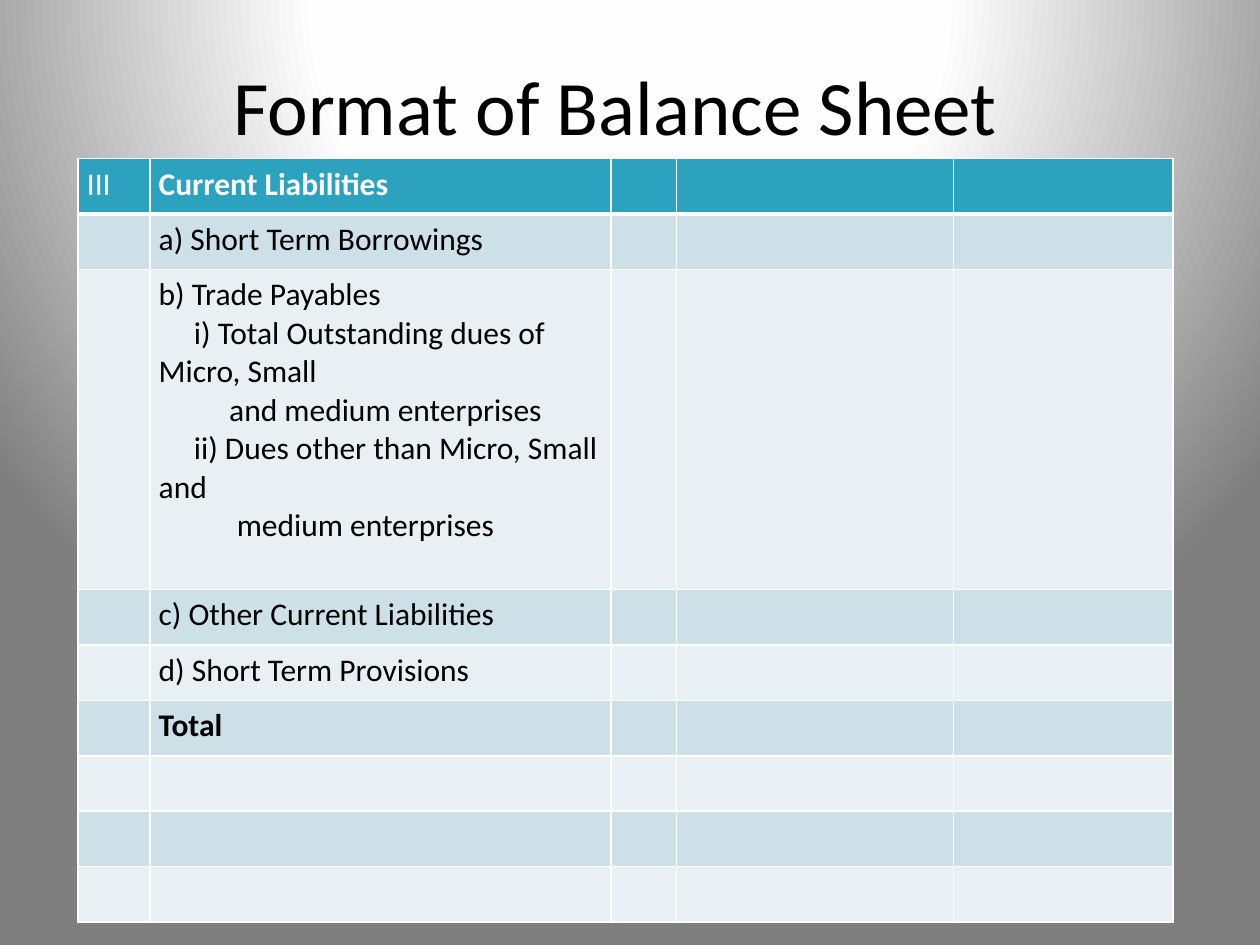
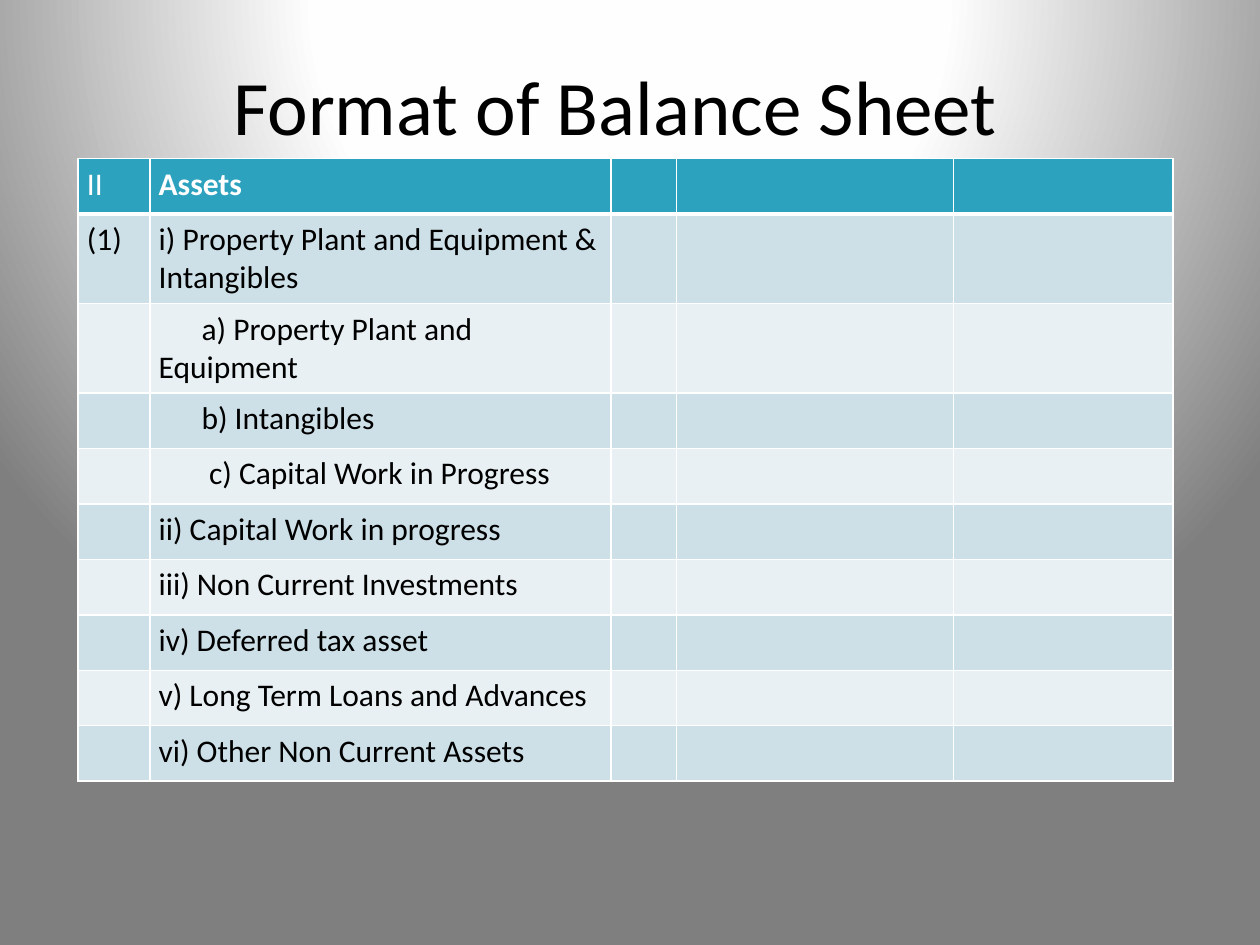
from dataclasses import dataclass

import pptx
import pptx.dml.color
import pptx.enum.text
import pptx.oxml
import pptx.oxml.ns
import pptx.util

COLORS = {
    "header": "2DA2BF",
    "dark_band": "CDE0E8",
    "light_band": "E8F0F4",
    "white": "FFFFFF",
    "black": "000000",
    "glow": "FEFEFE",
    "edge": "7F7F7F",
}
FONT = "Calibri"
HEADING = "Format of Balance Sheet"

# Grid: 100 columns by 75 rows on a 10 x 7.5 inch slide
GRID_COLUMNS, GRID_ROWS = 100, 75
UNIT = pptx.util.Inches(0.1)
TITLE_BOX = {"left": 4.6, "top": 4, "width": 88.5, "height": 8.6}
TABLE_LEFT, TABLE_TOP = 6.2, 12.6
COLUMN_WIDTHS = (5.7, 36.6, 5.2, 22, 17.4)
ONE_LINE, TWO_LINES, TRADE_LINES = 4.4, 7.1, 25.4
CELL_MARGINS = {"margin_left": 0.7, "margin_right": 0.7,
                "margin_top": 0.5, "margin_bottom": 0.5}


@dataclass
class Entry:
    """One balance sheet row; each line is (first-line indent, text)."""
    number: str = ""
    lines: tuple = ()
    height: float = ONE_LINE
    bold: bool = False


def item(text, indent=0, **options):
    return Entry(lines=((indent, text),), **options)


LIABILITIES = [
    Entry("III", ((0, "Current Liabilities"),), bold=True),
    item("a) Short Term Borrowings"),
    Entry(lines=(
        (0, "b) Trade Payables"),
        (2.8, "i) Total Outstanding dues of Micro, Small"),
        (5.6, "and medium enterprises"),
        (2.8, "ii) Dues other than Micro, Small and"),
        (6.2, "medium enterprises"),
    ), height=TRADE_LINES),
    item("c) Other Current Liabilities"),
    item("d) Short Term Provisions"),
    item("Total", bold=True),
    Entry(), Entry(), Entry(),
]
ASSETS = [
    Entry("II", ((0, "Assets"),), bold=True),
    Entry("(1)", ((0, "i) Property Plant and Equipment & Intangibles"),),
          TWO_LINES),
    item("a) Property Plant and Equipment", 3.4, height=TWO_LINES),
    item("b) Intangibles", 3.4),
    item("c) Capital Work in Progress", 4),
    item("ii) Capital Work in progress"),
    item("iii) Non Current Investments"),
    item("iv) Deferred tax asset"),
    item("v) Long Term Loans and Advances"),
    item("vi) Other Non Current Assets"),
]


def grid(units):
    return round(units * UNIT)


def rgb(name):
    return pptx.dml.color.RGBColor.from_string(COLORS[name])


def set_all(target, values):
    for attribute, value in values.items():
        setattr(target, attribute, value)


def format_font(font, size, color, bold=False):
    set_all(font, {"name": FONT, "size": pptx.util.Pt(size), "bold": bold})
    font.color.rgb = rgb(color)


# Shared background: a round glow from above the slide
def paint_background(master):
    master.background.fill.solid()
    stops = "".join(
        f'<a:gs pos="{share * 1000}"><a:srgbClr val="{COLORS[name]}"/></a:gs>'
        for share, name in ((0, "white"), (40, "glow"), (100, "edge")))
    glow = pptx.oxml.parse_xml(
        f'<a:gradFill {pptx.oxml.ns.nsdecls("a")} rotWithShape="1">'
        f'<a:gsLst>{stops}</a:gsLst><a:path path="circle">'
        '<a:fillToRect l="50000" t="-80000" r="50000" b="180000"/>'
        '</a:path></a:gradFill>')
    properties = master.element.cSld.find(
        f'{pptx.oxml.ns.qn("p:bg")}/{pptx.oxml.ns.qn("p:bgPr")}')
    properties.replace(properties.find(pptx.oxml.ns.qn("a:solidFill")), glow)


def add_heading(slide):
    heading = slide.shapes.title
    set_all(heading, {side: grid(n) for side, n in TITLE_BOX.items()})
    frame = heading.text_frame
    frame.text = HEADING
    frame.vertical_anchor = pptx.enum.text.MSO_ANCHOR.MIDDLE
    frame.paragraphs[0].alignment = pptx.enum.text.PP_ALIGN.CENTER
    format_font(frame.paragraphs[0].runs[0].font, 44, "black")


# Table cells
def add_borders(cell, bottom):
    properties = cell._tc.get_or_add_tcPr()
    for side, points in (("L", 1), ("R", 1), ("T", 1), ("B", bottom)):
        properties.append(pptx.oxml.parse_xml(
            f'<a:ln{side} {pptx.oxml.ns.nsdecls("a")} '
            f'w="{pptx.util.Pt(points)}"><a:solidFill>'
            f'<a:srgbClr val="{COLORS["white"]}"/>'
            f'</a:solidFill></a:ln{side}>'))


def style_cell(cell, row_index):
    is_header = row_index == 0
    add_borders(cell, bottom=3 if is_header else 1)
    band = "dark_band" if row_index % 2 else "light_band"
    cell.fill.solid()
    cell.fill.fore_color.rgb = rgb("header" if is_header else band)
    set_all(cell, {side: grid(n) for side, n in CELL_MARGINS.items()})


def write_lines(cell, lines, color, bold=False):
    frame = cell.text_frame
    for index, (indent, text) in enumerate(lines):
        paragraph = frame.add_paragraph() if index else frame.paragraphs[0]
        if indent:
            paragraph._p.get_or_add_pPr().set("indent", str(grid(indent)))
        run = paragraph.add_run()
        run.text = text
        format_font(run.font, 18, color, bold)


def add_statement(slide, entries):
    height = sum(entry.height for entry in entries)
    statement = slide.shapes.add_table(
        len(entries), len(COLUMN_WIDTHS), grid(TABLE_LEFT), grid(TABLE_TOP),
        grid(sum(COLUMN_WIDTHS)), grid(height)).table
    statement.horz_banding = False
    for column, width in zip(statement.columns, COLUMN_WIDTHS):
        column.width = grid(width)
    for index, (row, entry) in enumerate(zip(statement.rows, entries)):
        row.height = grid(entry.height)
        for cell in row.cells:
            style_cell(cell, index)
        color = "black" if index else "white"
        if entry.number:
            write_lines(row.cells[0], ((0, entry.number),), color)
        write_lines(row.cells[1], entry.lines, color, entry.bold)


def main():
    deck = pptx.Presentation()
    deck.slide_width = grid(GRID_COLUMNS)
    deck.slide_height = grid(GRID_ROWS)
    paint_background(deck.slide_master)
    title_only = deck.slide_layouts[5]
    for entries in (LIABILITIES, ASSETS):
        slide = deck.slides.add_slide(title_only)
        add_heading(slide)
        add_statement(slide, entries)
    deck.save("out.pptx")


if __name__ == "__main__":
    main()
